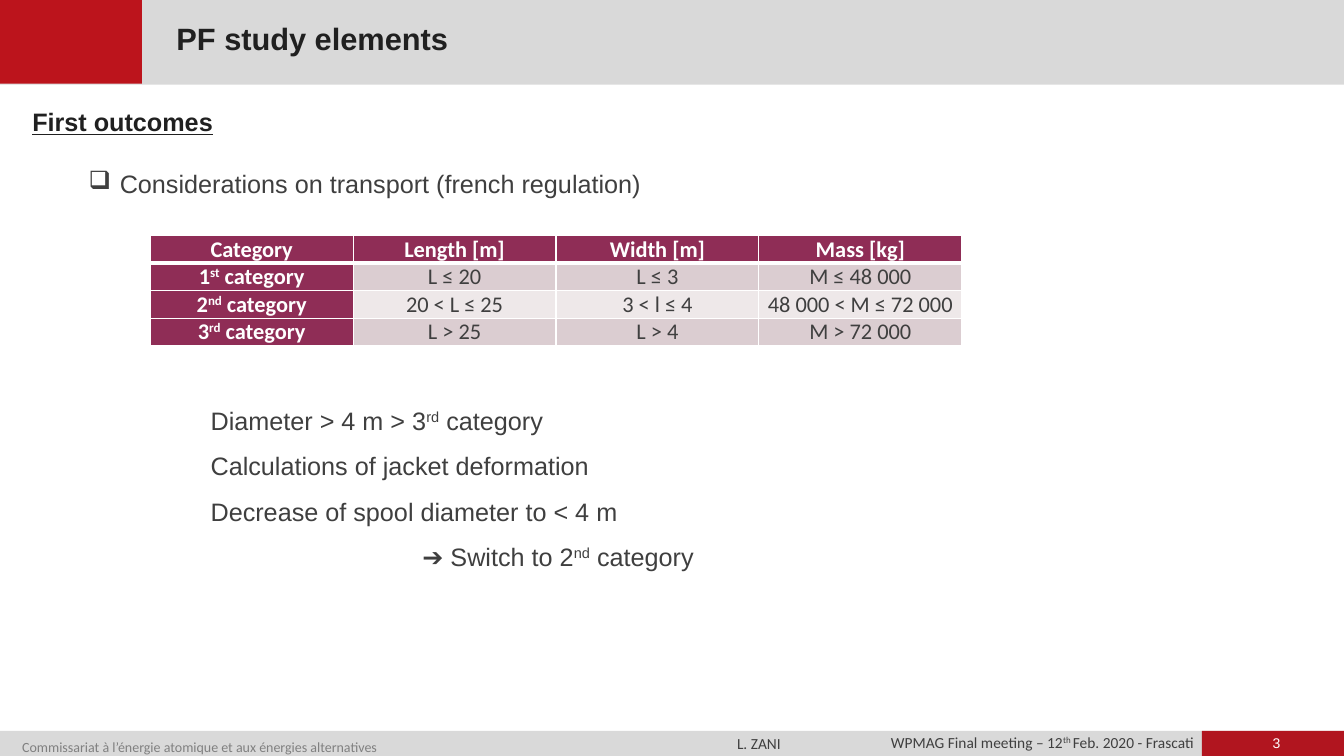
from pptx import Presentation
from pptx.dml.color import RGBColor
from pptx.enum.shapes import MSO_SHAPE as Shape
from pptx.enum.text import MSO_ANCHOR as Anchor, MSO_AUTO_SIZE as AutoSize, PP_ALIGN as Align
from pptx.oxml.ns import qn
from pptx.util import Inches, Pt
from lxml.etree import SubElement

# Content: text between ^ marks is superscript
TITLE = "PF study elements"
HEADING = "First outcomes"
TOPIC = "Considerations on transport (french regulation)"
CATEGORIES = [
    ("Category", "Length [m]", "Width [m]", "Mass [kg]"),
    ("1^st^ category", "L ≤ 20", "L ≤ 3", "M ≤ 48 000"),
    ("2^nd^ category", "20 < L ≤ 25", "3 < l ≤ 4", "48 000 < M ≤ 72 000"),
    ("3^rd^ category", "L > 25", "L > 4", "M > 72 000"),
]
FINDINGS = [
    "Diameter > 4 m > 3^rd^ category",
    "Calculations of jacket deformation",
    "Decrease of spool diameter to < 4 m",
]
CONCLUSION = "➔ Switch to 2^nd^ category"
EVENT = "WPMAG Final meeting – 12^th ^Feb. 2020 - Frascati"
ORGANISATION = "Commissariat à l’énergie atomique et aux énergies alternatives"
AUTHOR = "L. ZANI"
PAGE = "3"

COLORS = {
    "band": "D9D9D9", "red": "BC141C", "page": "B1151F", "dark": "202020",
    "text": "3F3F3F", "muted": "808080", "white": "FFFFFF",
    "plum": "8F2D56", "odd": "DBCDD1", "even": "EEE8E9",
}

# Places: left, top, width, height in percent of the slide
BANDS = [
    ("band", (0, 96.67, 100, 3.33)),
    ("band", (0, -0.4, 100, 11.6)),
    ("page", (89.42, 96.67, 10.58, 3.33)),
    ("red", (-0.08, -0.4, 10.65, 11.47)),
]
FOOTER = [
    (EVENT, (64.37, 97.2, 25.06, 2.27), 11, "Calibri", "text", Align.RIGHT, 0.9),
    (ORGANISATION, (1.05, 96.8, 45.24, 2.8), 10, "Calibri", "muted", Align.LEFT, 1.4),
    (AUTHOR, (54.24, 97.07, 4.5, 2.53), 11, "Calibri", "text", Align.LEFT, 1),
    (PAGE, (91.52, 97.2, 6.9, 2.27), 10, "Arial", "white", Align.CENTER, 1),
]
TITLE_BOX = (12.08, 2.8, 48.09, 5.47)
HEADING_BOX = (1.35, 13.6, 86.65, 5.47)
TOPIC_BOX = (5.85, 21.6, 42.99, 5.33)
TABLE_BOX = (11.18, 31.2, 60.39, 14.27)
FINDINGS_BOX = (14.93, 50.93, 38.41, 25.6)

prs = Presentation()
prs.slide_width, prs.slide_height = Inches(13.33), Inches(7.5)
slide = prs.slides.add_slide(prs.slide_layouts[1])
shapes = slide.shapes


def rgb(name):
    return RGBColor.from_string(COLORS[name])


def place(box):
    sides = (prs.slide_width, prs.slide_height) * 2
    return [int(side * share / 100) for side, share in zip(sides, box)]


def write(paragraph, text, size, font, color, bold=False, underline=False,
          align=Align.LEFT, spacing=1):
    paragraph.alignment = align
    paragraph.line_spacing = spacing
    for i, part in enumerate(text.split("^")):
        if not part:
            continue
        run = paragraph.add_run()
        run.text = part
        run.font.size, run.font.name = Pt(size), font
        run.font.bold, run.font.underline = bold, underline
        run.font.color.rgb = rgb(color)
        if i % 2:
            run.font._element.set("baseline", "30000")


def indent(paragraph, left, first=0, bullet=None):
    props = paragraph._p.get_or_add_pPr()
    props.set("marL", str(Inches(left)))
    props.set("indent", str(Inches(first)))
    if bullet:
        SubElement(props, qn("a:buChar"), char=bullet)
    else:
        SubElement(props, qn("a:buNone"))


def set_frame(frame, side, edge, wrap=True, anchor=Anchor.TOP):
    frame.margin_left = frame.margin_right = Inches(side)
    frame.margin_top = frame.margin_bottom = Inches(edge)
    frame.word_wrap, frame.auto_size = wrap, AutoSize.NONE
    frame.vertical_anchor = anchor
    return frame


def fill_placeholder(holder, box, text, size, edge, spacing, anchor, underline=False):
    holder.left, holder.top, holder.width, holder.height = place(box)
    line = set_frame(holder.text_frame, 0.14, edge, anchor=anchor).paragraphs[0]
    indent(line, 0)
    line.space_before = Pt(0)
    write(line, text, size, "Arial", "dark", True, underline, spacing=spacing)
    shapes._spTree.append(holder._element)  # above the bands


def add_border(cell, side, width):
    line = SubElement(cell._tc.get_or_add_tcPr(), qn(f"a:ln{side}"), w=str(Pt(width)))
    fill = SubElement(line, qn("a:solidFill"))
    SubElement(fill, qn("a:srgbClr"), val=COLORS["white"])


# Header and footer
for color, box in BANDS:
    band = shapes.add_shape(Shape.RECTANGLE, *place(box))
    band.shadow.inherit = False
    band.fill.solid()
    band.fill.fore_color.rgb = rgb(color)
    band.line.fill.background()

for text, box, size, font, color, align, spacing in FOOTER:
    frame = set_frame(shapes.add_textbox(*place(box)).text_frame, 0.08, 0, text != AUTHOR)
    write(frame.paragraphs[0], text, size, font, color, align=align, spacing=spacing)

# Title and heading
fill_placeholder(shapes.title, TITLE_BOX, TITLE, 22, 0.05, 0.8, Anchor.MIDDLE)
fill_placeholder(slide.placeholders[1], HEADING_BOX, HEADING, 18, 0.07, 0.9,
                 Anchor.TOP, underline=True)

# Category table
table = shapes.add_table(len(CATEGORIES), len(CATEGORIES[0]), *place(TABLE_BOX)).table
for r, row in enumerate(CATEGORIES):
    for c, text in enumerate(row):
        cell = table.cell(r, c)
        cell.margin_left = cell.margin_right = Inches(0.07)
        cell.margin_top = cell.margin_bottom = 0
        for side in "LRTB":
            under_header = (r, side) in ((0, "B"), (1, "T"))
            add_border(cell, side, 3 if under_header else 1)
        label = r == 0 or c == 0
        cell.fill.solid()
        cell.fill.fore_color.rgb = rgb("plum" if label else "odd" if r % 2 else "even")
        write(cell.text_frame.paragraphs[0], text, 16, "Calibri",
              "white" if label else "text", label, align=Align.CENTER)

# Topic
topic = set_frame(shapes.add_textbox(*place(TOPIC_BOX)).text_frame, 0.1, 0.05, False)
indent(topic.paragraphs[0], 0.31, -0.31, "❑")
write(topic.paragraphs[0], TOPIC, 18, "Arial", "text")

# Findings and conclusion
findings = set_frame(shapes.add_textbox(*place(FINDINGS_BOX)).text_frame, 0.1, 0.05)
for i, text in enumerate(FINDINGS + [CONCLUSION]):
    line = findings.add_paragraph() if i else findings.paragraphs[0]
    indent(line, 2.1 if text == CONCLUSION else 0)
    write(line, text, 18, "Arial", "text", spacing=1.5)

prs.save("out.pptx")
